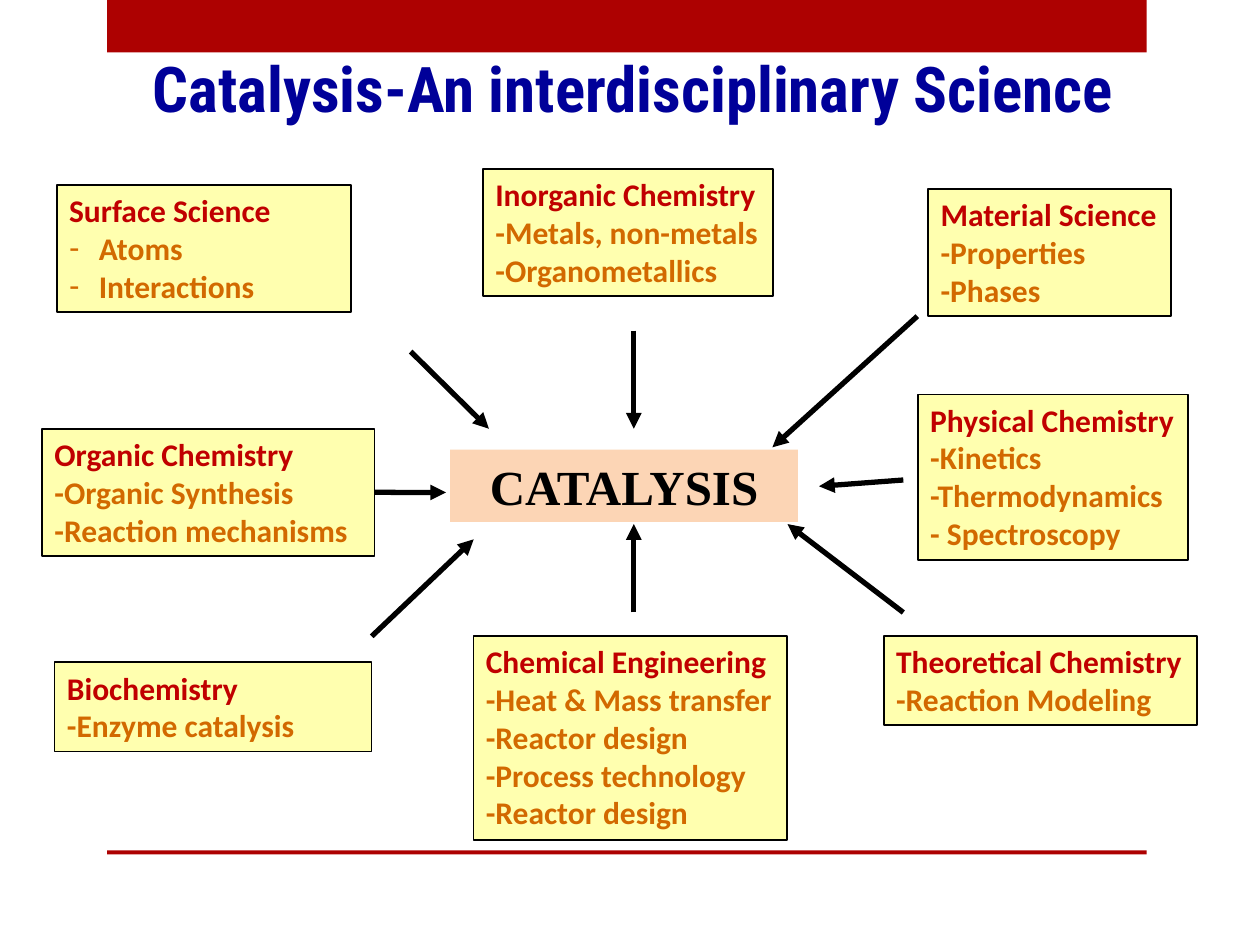
from pptx import Presentation
from pptx.dml.color import RGBColor
from pptx.enum.shapes import MSO_CONNECTOR, MSO_SHAPE
from pptx.enum.text import MSO_ANCHOR, PP_ALIGN
from pptx.oxml.ns import qn
from pptx.util import Pt
from lxml import etree

RECTANGLE = MSO_SHAPE.RECTANGLE
STRAIGHT = MSO_CONNECTOR.STRAIGHT
CENTER = PP_ALIGN.CENTER
BOTTOM, TOP = MSO_ANCHOR.BOTTOM, MSO_ANCHOR.TOP


def color(value):
    return RGBColor.from_string(value)


def add_rectangle(left, top, width, height, fill, line=None):
    shape = slide.shapes.add_shape(RECTANGLE, Pt(left), Pt(top), Pt(width), Pt(height))
    shape.shadow.inherit = False
    shape.fill.solid()
    shape.fill.fore_color.rgb = color(fill)
    if line:
        shape.line.color.rgb = color(line)
        shape.line.width = Pt(1)
    else:
        shape.line.fill.background()
    return shape


presentation = Presentation()
presentation.slide_width, presentation.slide_height = Pt(720), Pt(540)
slide = presentation.slides.add_slide(presentation.slide_layouts[6])

# Red band at the top and rule at the bottom
add_rectangle(61.2, 0, 594, 30, "AD0101")
add_rectangle(61.2, 486, 594, 2.2, "AD0101")

# Title
title = slide.shapes.add_textbox(Pt(69), Pt(34), Pt(585.5), Pt(37.5))
frame = title.text_frame
frame.word_wrap = True
frame.vertical_anchor = BOTTOM
frame.margin_left = frame.margin_right = frame.margin_top = frame.margin_bottom = 0
paragraph = frame.paragraphs[0]
paragraph.text = "Catalysis-An interdisciplinary Science"
paragraph.alignment = CENTER
paragraph.font.name = "Roboto Condensed"
paragraph.font.size = Pt(36)
paragraph.font.bold = True
paragraph.font.color.rgb = color("000099")

# Contributing fields: left, top, width, height, wrap, heading, topics
fields = [
    (32.4, 105.6, 168.4, 72.7, True, "Surface Science", ["Atoms", "Interactions"]),
    (276, 96.5, 165.6, 72.7, False, "Inorganic Chemistry",
     ["-Metals, non-metals", "-Organometallics"]),
    (530.4, 108, 138.8, 72.7, False, "Material Science", ["-Properties", "-Phases"]),
    (24, 245, 190, 72.7, True, "Organic Chemistry",
     ["-Organic Synthesis", "-Reaction mechanisms"]),
    (524.5, 225.4, 154.6, 94.5, False, "Physical Chemistry",
     ["-Kinetics", "-Thermodynamics", "- Spectroscopy"]),
    (31.2, 378.5, 181.2, 50.9, True, "Biochemistry", ["-Enzyme catalysis"]),
    (505, 363.5, 179.2, 50.9, False, "Theoretical Chemistry", ["-Reaction Modeling"]),
    (270.5, 363.5, 179.4, 116.4, False, "Chemical Engineering",
     ["-Heat & Mass transfer", "-Reactor design", "-Process technology",
      "-Reactor design"]),
]
boxes = {}
for left, top, width, height, wrap, heading, topics in fields:
    box = add_rectangle(left, top, width, height, "FFFFAF", "000000")
    boxes[heading] = box
    frame = box.text_frame
    frame.word_wrap = wrap
    frame.vertical_anchor = TOP
    frame.text = "\n".join([heading] + topics)
    for index, paragraph in enumerate(frame.paragraphs):
        paragraph.alignment = PP_ALIGN.LEFT
        if heading == "Surface Science" and index > 0:
            properties = paragraph._p.get_or_add_pPr()
            properties.set("marL", str(Pt(17)))
            properties.set("indent", str(-Pt(17)))
            etree.SubElement(properties, qn("a:buFont")).set("typeface", "Arial")
            etree.SubElement(properties, qn("a:buChar")).set("char", "-")
        paragraph.font.name = "Calibri"
        paragraph.font.size = Pt(18)
        paragraph.font.bold = True
        paragraph.font.color.rgb = color("D26900" if index else "C00000")

# Central subject
center_box = add_rectangle(257.2, 257, 198.8, 41.2, "FCD5B5")
paragraph = center_box.text_frame.paragraphs[0]
paragraph.text = "CATALYSIS"
paragraph.alignment = CENTER
paragraph.font.name = "Times New Roman"
paragraph.font.size = Pt(28)
paragraph.font.bold = True
paragraph.font.color.rgb = color("000000")

# Arrows towards the centre: start x, start y, end x, end y, joined field
arrows = [
    (362.2, 189, 362.2, 245, None),
    (234.7, 200.9, 279.4, 245, None),
    (524.2, 180.7, 441.4, 255.6, None),
    (214, 281.4, 254.9, 281.4, "Organic Chemistry"),
    (516.2, 274.3, 468, 277.9, None),
    (212.4, 363.6, 270.7, 308.2, None),
    (362.2, 350, 362.2, 299.5, None),
    (516.2, 350, 450, 299.5, None),
]
for start_x, start_y, end_x, end_y, source in arrows:
    arrow = slide.shapes.add_connector(
        STRAIGHT, Pt(start_x), Pt(start_y), Pt(end_x), Pt(end_y))
    if source:
        arrow.begin_connect(boxes[source], 3)
    arrow.line.color.rgb = color("000000")
    arrow.line.width = Pt(3)
    etree.SubElement(arrow.line._get_or_add_ln(), qn("a:tailEnd")).set("type", "triangle")
    etree.SubElement(arrow._element.spPr, qn("a:effectLst"))

presentation.save("out.pptx")
